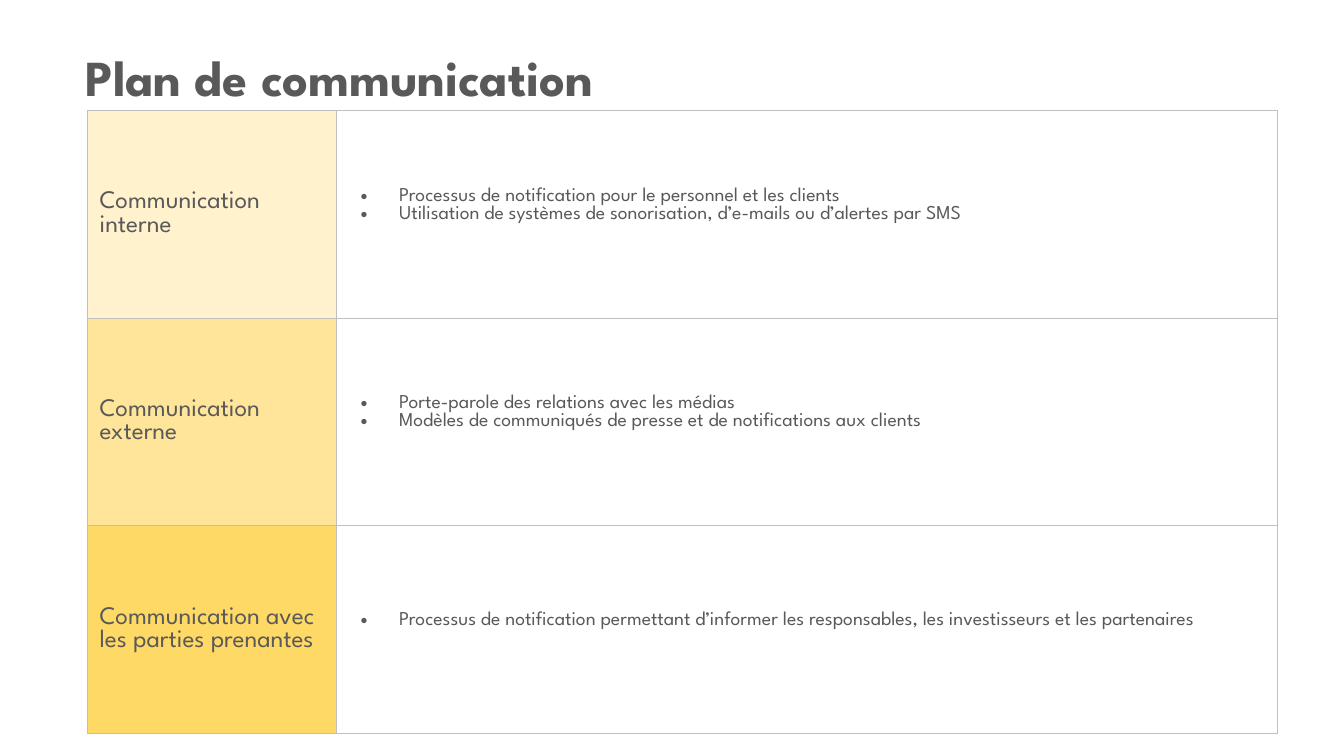
from lxml.etree import SubElement
from pptx import Presentation
from pptx.dml.color import RGBColor
from pptx.enum.text import MSO_ANCHOR as Anchor
from pptx.oxml.ns import qn
from pptx.util import Cm, Pt

TITLE = "Plan de communication"
FONT = "League Spartan"
GREY = RGBColor(0x59, 0x59, 0x59)
BORDER = RGBColor(0xBF, 0xBF, 0xBF)
PALE = RGBColor(0xFF, 0xF2, 0xCC)
LIGHT = RGBColor(0xFF, 0xE5, 0x99)
GOLD = RGBColor(0xFF, 0xD9, 0x66)

PLAN = [
    ("Communication interne", PALE, [
        "Processus de notification pour le personnel et les clients",
        "Utilisation de systèmes de sonorisation, d’e-mails ou d’alertes par SMS",
    ]),
    ("Communication externe", LIGHT, [
        "Porte-parole des relations avec les médias",
        "Modèles de communiqués de presse et de notifications aux clients",
    ]),
    ("Communication avec les parties prenantes", GOLD, [
        "Processus de notification permettant d’informer les responsables, "
        "les investisseurs et les partenaires",
    ]),
]
COLUMN_WIDTHS = [Cm(6.28), Cm(23.72)]
ROW_HEIGHT = Cm(5.23)
LINE_HEIGHT = Cm(0.45)


def write(para, text, size, bold=False):
    span = para.add_run()
    span.text = text
    span.font.name = FONT
    span.font.size = Pt(size)
    span.font.bold = bold
    span.font.color.rgb = GREY


def indent(para, left, first=0, bullet=None):
    properties = para._p.get_or_add_pPr()
    properties.set("marL", str(Cm(left)))
    properties.set("indent", str(Cm(first)))
    if bullet:
        SubElement(properties, qn("a:buFont"), typeface="Arial")
        SubElement(properties, qn("a:buChar"), char=bullet)


def draw_borders(cell):
    properties = cell._tc.get_or_add_tcPr()
    for position, side in enumerate(("lnL", "lnR", "lnT", "lnB")):
        line = properties.makeelement(qn(f"a:{side}"), {"w": str(Pt(1))})
        fill = SubElement(line, qn("a:solidFill"))
        SubElement(fill, qn("a:srgbClr"), val=str(BORDER))
        properties.insert(position, line)


def prepare(cell, bottom=0):
    cell.vertical_anchor = Anchor.MIDDLE
    cell.margin_left = cell.margin_right = Cm(0.13)
    cell.margin_top = 0
    cell.margin_bottom = bottom
    draw_borders(cell)


def add_title(page):
    box = page.shapes.add_textbox(Cm(1.9), Cm(1), Cm(27.94), Cm(1.8))
    frame = box.text_frame
    frame.word_wrap = True
    frame.vertical_anchor = Anchor.BOTTOM
    write(frame.paragraphs[0], TITLE, 36, bold=True)


def add_plan(page):
    table = page.shapes.add_table(
        len(PLAN), len(COLUMN_WIDTHS), Cm(2.2), Cm(2.79),
        sum(COLUMN_WIDTHS), ROW_HEIGHT * len(PLAN)).table
    table.first_row = table.horz_banding = False
    for column, width in zip(table.columns, COLUMN_WIDTHS):
        column.width = width
    for row, (heading, color, actions) in enumerate(PLAN):
        table.rows[row].height = ROW_HEIGHT
        label, details = table.cell(row, 0), table.cell(row, 1)

        label.fill.solid()
        label.fill.fore_color.rgb = color
        prepare(label)
        para = label.text_frame.paragraphs[0]
        indent(para, 0.18)
        write(para, heading, 18)

        details.fill.background()
        prepare(details, LINE_HEIGHT)
        frame = details.text_frame
        for number, action in enumerate(actions):
            para = frame.add_paragraph() if number else frame.paragraphs[0]
            indent(para, 1.45, -0.97, "•")
            write(para, action, 14)


def main():
    deck = Presentation()
    deck.slide_width, deck.slide_height = Cm(33.87), Cm(19.05)
    page = deck.slides.add_slide(deck.slide_layouts[6])
    add_title(page)
    add_plan(page)
    deck.save("out.pptx")


if __name__ == "__main__":
    main()
